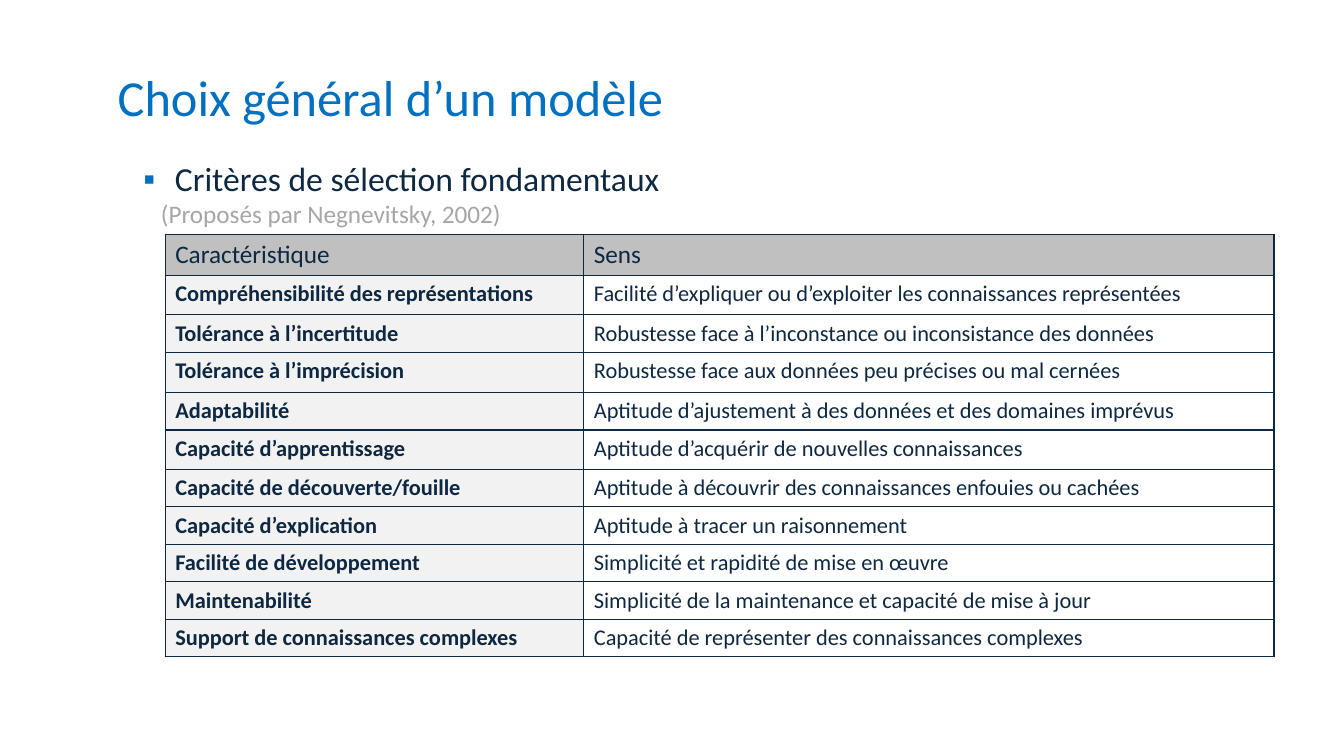
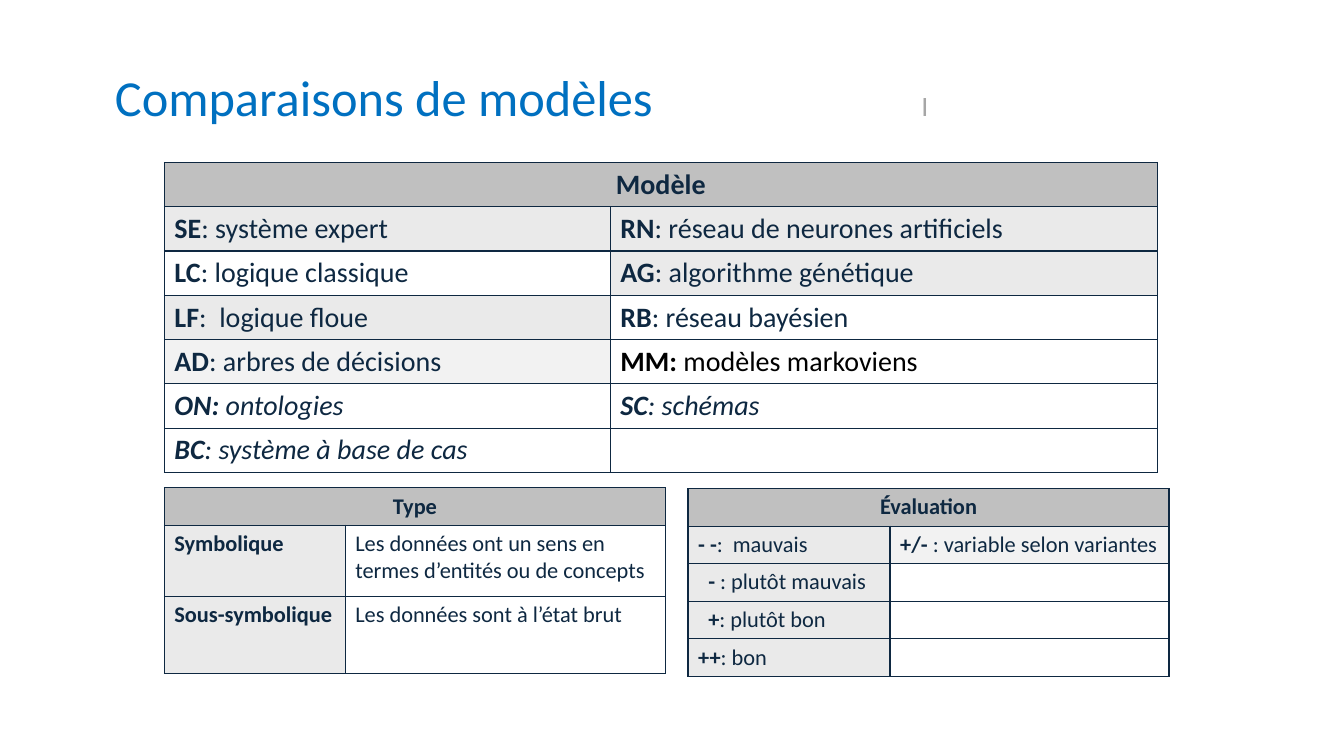
import pptx
import pptx.dml.color
import pptx.enum.text
import pptx.oxml
import pptx.oxml.ns
import pptx.presentation
import pptx.shapes.autoshape
import pptx.slide
import pptx.table
import pptx.text.text
import pptx.util
from dataclasses import dataclass
from lxml import etree
from typing import Optional

# Shared look
FONT = "Calibri"
NAVY, BLUE, BLACK, MUTED = "0E2841", "0070C0", "000000", "A6A6A6"
HEADER_FILL, LABEL_FILL, PALE_FILL = "C0C0C0", "EAEAEA", "F2F2F2"
TITLE_SIZE = 36
BORDER_WIDTH = 1


@dataclass
class Run:
    text: str
    size: float
    color: str = NAVY
    bold: bool = False
    italic: bool = False


@dataclass
class Cell:
    lead: str = ""  # bold part
    rest: str = ""  # plain part
    fill: Optional[str] = None
    color: str = NAVY
    italic: bool = False
    indent: float = 0


@dataclass
class Grid:
    left: float
    top: float
    columns: list[float]
    heights: list[float]
    size: float
    rows: list[list[Cell]]
    header_size: Optional[float] = None
    merged_header: bool = True


def rgb(color: str) -> pptx.dml.color.RGBColor:
    return pptx.dml.color.RGBColor.from_string(color)


def add_child(parent: etree._Element, tag: str, **attributes: str) -> etree._Element:
    return etree.SubElement(parent, pptx.oxml.ns.qn(tag), attributes)


# Text
def add_run(paragraph: pptx.text.text._Paragraph, part: Run) -> None:
    run = paragraph.add_run()
    run.text = part.text
    run.font.name = FONT
    run.font.size = pptx.util.Pt(part.size)
    run.font.bold = part.bold
    run.font.italic = part.italic
    run.font.color.rgb = rgb(part.color)


def set_indent(paragraph: pptx.text.text._Paragraph, margin: float,
               first_line: float = 0) -> etree._Element:
    properties = paragraph._p.get_or_add_pPr()
    properties.set("marL", str(int(pptx.util.Pt(margin))))
    properties.set("indent", str(int(pptx.util.Pt(first_line))))
    return properties


def add_text_box(slide: pptx.slide.Slide, left: float, top: float,
                 width: float, height: float) -> pptx.text.text.TextFrame:
    box = slide.shapes.add_textbox(*map(pptx.util.Pt, (left, top, width, height)))
    box.text_frame.word_wrap = True
    return box.text_frame


def add_title(slide: pptx.slide.Slide, left: float,
              text: str) -> pptx.text.text._Paragraph:
    paragraph = add_text_box(slide, left, 43.5, 756, 108).paragraphs[0]
    add_run(paragraph, Run(text, TITLE_SIZE, BLUE))
    return paragraph


# Tables
def style_cell(cell: pptx.table._Cell, fill: Optional[str]) -> None:
    properties = cell._tc.get_or_add_tcPr()
    for side in ("a:lnL", "a:lnR", "a:lnT", "a:lnB"):
        line = add_child(properties, side, w=str(int(pptx.util.Pt(BORDER_WIDTH))))
        add_child(add_child(line, "a:solidFill"), "a:srgbClr", val=NAVY)
    if fill:
        cell.fill.solid()
        cell.fill.fore_color.rgb = rgb(fill)
    else:
        cell.fill.background()


def fill_cell(cell: pptx.table._Cell, content: Cell, size: float,
              centered: bool) -> None:
    style_cell(cell, content.fill)
    paragraph = cell.text_frame.paragraphs[0]
    if centered:
        paragraph.alignment = pptx.enum.text.PP_ALIGN.CENTER
    if content.indent:
        set_indent(paragraph, content.indent)
    for text, bold in ((content.lead, True), (content.rest, False)):
        if text:
            add_run(paragraph, Run(text, size, content.color, bold, content.italic))
    if not (content.lead or content.rest):
        add_child(paragraph._p, "a:endParaRPr", sz=str(int(size * 100)))


def add_grid(slide: pptx.slide.Slide, grid: Grid) -> None:
    frame = slide.shapes.add_table(
        len(grid.rows), len(grid.columns),
        *map(pptx.util.Pt, (grid.left, grid.top, sum(grid.columns), sum(grid.heights))))
    table = frame.table
    table.first_row = False
    table.horz_banding = False
    for column, width in zip(table.columns, grid.columns):
        column.width = pptx.util.Pt(width)
    for row, height in zip(table.rows, grid.heights):
        row.height = pptx.util.Pt(height)
    for row_index, contents in enumerate(grid.rows):
        is_header = row_index == 0
        size = grid.header_size if is_header and grid.header_size else grid.size
        for column_index, content in enumerate(contents):
            fill_cell(table.cell(row_index, column_index), content, size,
                      is_header and grid.merged_header)
    if grid.merged_header:
        table.cell(0, 0).merge(table.cell(0, len(grid.columns) - 1))


def merged_header(text: str) -> list[Cell]:
    return [Cell(text, fill=HEADER_FILL), Cell(fill=HEADER_FILL)]


# Slide 1: selection criteria
CRITERIA = [
    ("Compréhensibilité des représentations",
     "Facilité d’expliquer ou d’exploiter les connaissances représentées"),
    ("Tolérance à l’incertitude",
     "Robustesse face à l’inconstance ou inconsistance des données"),
    ("Tolérance à l’imprécision",
     "Robustesse face aux données peu précises ou mal cernées"),
    ("Adaptabilité",
     "Aptitude d’ajustement à des données et des domaines imprévus"),
    ("Capacité d’apprentissage", "Aptitude d’acquérir de nouvelles connaissances"),
    ("Capacité de découverte/fouille",
     "Aptitude à découvrir des connaissances enfouies ou cachées"),
    ("Capacité d’explication", "Aptitude à tracer un raisonnement"),
    ("Facilité de développement", "Simplicité et rapidité de mise en œuvre"),
    ("Maintenabilité", "Simplicité de la maintenance et capacité de mise à jour"),
    ("Support de connaissances complexes",
     "Capacité de représenter des connaissances complexes"),
]


def build_criteria_slide(slide: pptx.slide.Slide) -> None:
    body = add_text_box(slide, 86.4, 109.5, 792, 403)
    heading = body.paragraphs[0]
    properties = set_indent(heading, 31.5, -22.5)
    add_child(add_child(properties, "a:buClr"), "a:srgbClr", val=BLUE)
    add_child(properties, "a:buFont", typeface="Arial")
    add_child(properties, "a:buChar", char="▪")
    add_run(heading, Run("Critères de sélection fondamentaux", 24))
    credit = body.add_paragraph()
    set_indent(credit, 21.5)
    add_run(credit, Run("(Proposés par Negnevitsky, 2002)", 18, MUTED))

    header = [Cell(rest=text, fill=HEADER_FILL) for text in ("Caractéristique", "Sens")]
    rows = [[Cell(name, fill=PALE_FILL), Cell(rest=meaning)]
            for name, meaning in CRITERIA]
    heights = [29.3, 28, 26.8, 28.8, 26.8, 28] + [26.8] * 5
    add_grid(slide, Grid(118, 167.5, [299, 493], heights, 16, [header] + rows,
                         header_size=18, merged_header=False))
    add_title(slide, 77, "Choix général d’un modèle")


# Slide 2: model comparison
MODELS = [
    [Cell("SE", ": système expert", LABEL_FILL),
     Cell("RN", ": réseau de neurones artificiels", LABEL_FILL)],
    [Cell("LC", ": logique classique"),
     Cell("AG", ": algorithme génétique", LABEL_FILL)],
    [Cell("LF", ":  logique floue", LABEL_FILL), Cell("RB", ": réseau bayésien")],
    [Cell("AD", ": arbres de décisions", PALE_FILL),
     Cell("MM:", " modèles markoviens", color=BLACK)],
    [Cell("ON: ", "ontologies", italic=True), Cell("SC", ": schémas", italic=True)],
    [Cell("BC", ": système à base de cas", italic=True), Cell()],
]
RATINGS = [
    [Cell("- -", ":  mauvais", LABEL_FILL),
     Cell("+/- ", ": variable selon variantes", PALE_FILL)],
    [Cell("- ", ": plutôt mauvais", LABEL_FILL, indent=7.2), Cell()],
    [Cell("+", ": plutôt bon", LABEL_FILL, indent=7.2), Cell()],
    [Cell("++", ": bon", LABEL_FILL), Cell()],
]
TYPES = [
    [Cell("Symbolique", fill=LABEL_FILL),
     Cell(rest="Les données ont un sens en termes d’entités ou de concepts")],
    [Cell("Sous-symbolique", fill=LABEL_FILL),
     Cell(rest="Les données sont à l’état brut")],
]


def build_comparison_slide(slide: pptx.slide.Slide) -> None:
    grids = [
        Grid(117.4, 116, [318.5, 390.7], [31.65] * 7, 20,
             [merged_header("Modèle")] + MODELS),
        Grid(491.5, 349, [144.3, 199.3], [26.8] * 5, 16,
             [merged_header("Évaluation")] + RATINGS),
        Grid(117.4, 348.3, [129.2, 228.8], [26.8, 50.9, 55.2], 16,
             [merged_header("Type")] + TYPES),
    ]
    for grid in grids:
        add_grid(slide, grid)
    title = add_title(slide, 75, "Comparaisons de modèles\t")
    tab_stops = add_child(title._p.get_or_add_pPr(), "a:tabLst")
    add_child(tab_stops, "a:tab", pos=str(int(pptx.util.Pt(576))), algn="l")
    add_run(title, Run("I", 20, MUTED))


def main() -> None:
    presentation = pptx.Presentation()
    presentation.slide_width = pptx.util.Pt(960)
    presentation.slide_height = pptx.util.Pt(540)
    blank_layout = presentation.slide_layouts[6]
    for build in (build_criteria_slide, build_comparison_slide):
        build(presentation.slides.add_slide(blank_layout))
    presentation.save("out.pptx")


if __name__ == "__main__":
    main()
